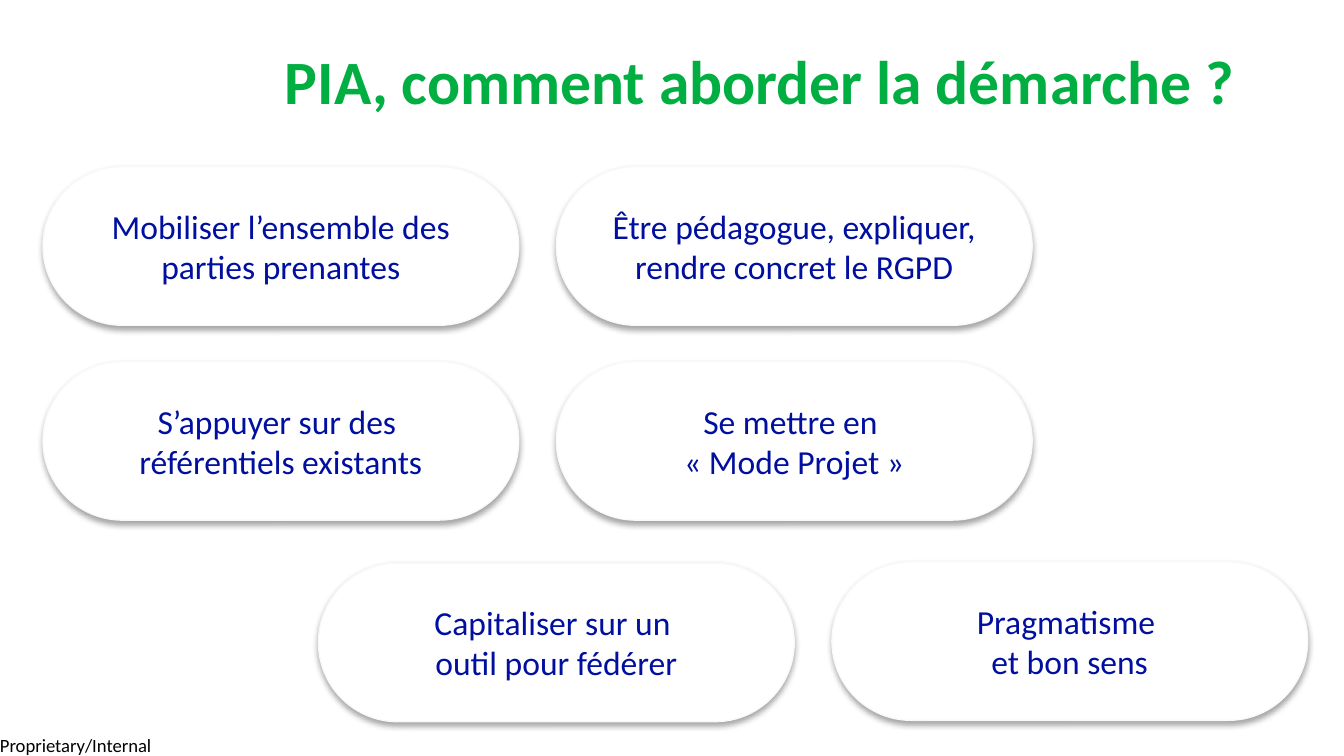
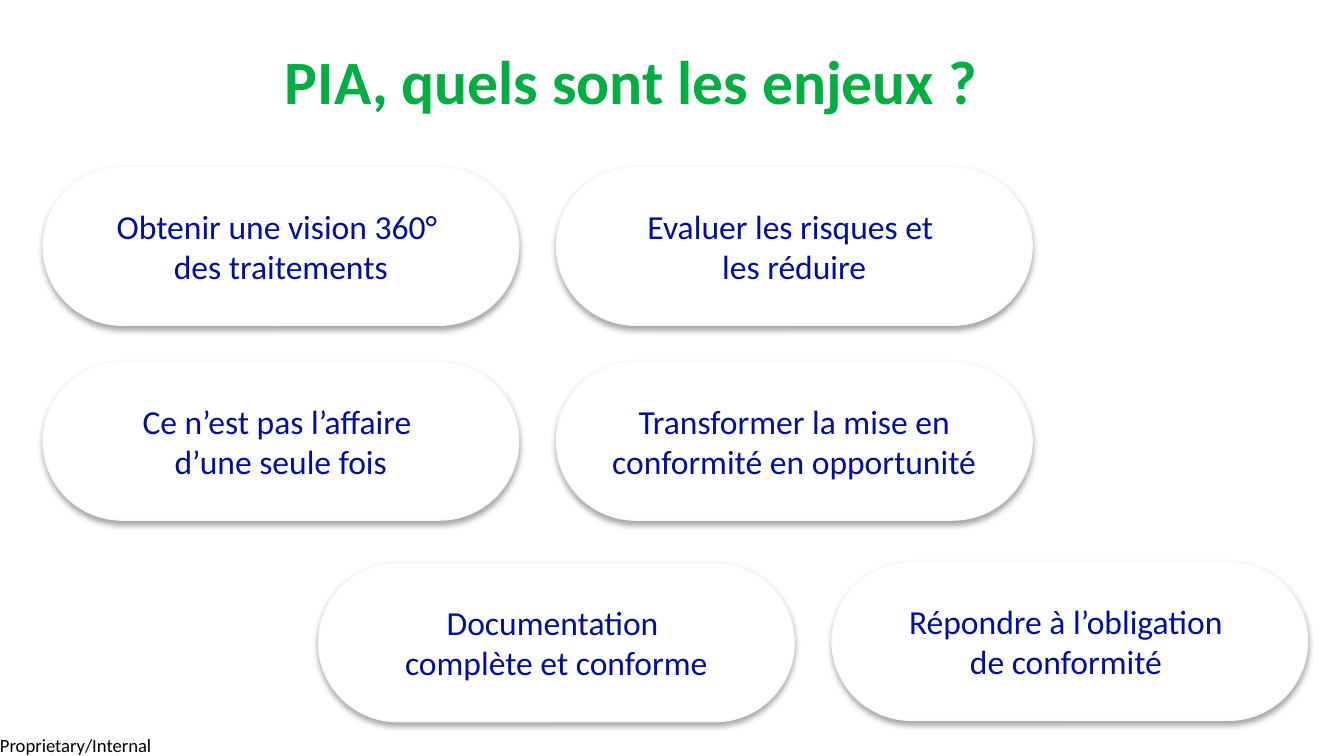
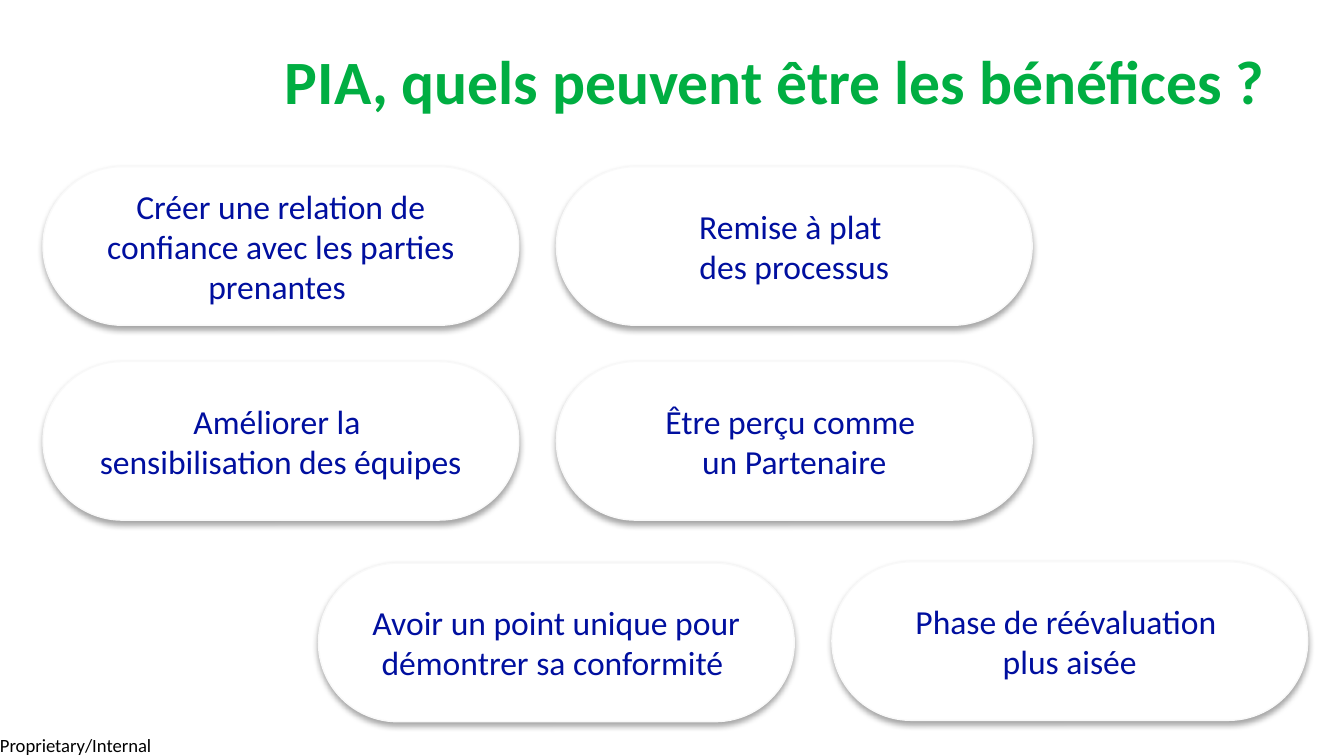
from dataclasses import dataclass

from lxml import etree
from pptx import Presentation
from pptx import util as u
from pptx.dml.color import RGBColor
from pptx.enum import shapes, text
from pptx.oxml import ns


@dataclass(frozen=True)
class Theme:
    font: str = "Calibri"
    green: str = "00AE42"
    navy: str = "000F9F"
    black: str = "000000"
    white: str = "FFFFFF"
    edge: str = "F9F9F9"
    title: int = 33
    body: int = 18
    small: int = 10


@dataclass(frozen=True)
class Row:
    left: int
    top: int
    rise: int = 0  # how much higher the right pill sits


@dataclass(frozen=True)
class Page:
    title: str
    width: int
    pills: tuple[str, ...]


THEME = Theme()
SCALE = 4572  # EMU per px, 200 px to the inch
WIDE, HIGH = 2000, 1125
PILL_W, PILL_H, STEP = 708, 236, 764
ROWS = (Row(64, 248), Row(64, 538), Row(474, 838, rise=2))
SPOTS = [(row.left + col * STEP, row.top - col * row.rise)
         for row in ROWS for col in range(2)]

# Pills run row by row; a line break starts a new paragraph.
PAGES = (
    Page("PIA, comment aborder la démarche ?", 1544, (
        "Mobiliser l’ensemble des parties prenantes",
        "Être pédagogue, expliquer, rendre concret le RGPD",
        "S’appuyer sur des \nréférentiels existants",
        "Se mettre en \n« Mode Projet »",
        "Capitaliser sur un \noutil pour fédérer",
        "Pragmatisme \net bon sens",
    )),
    Page("PIA, quels sont les enjeux ?", 1486, (
        "Obtenir une vision 360° \ndes traitements",
        "Evaluer les risques et \nles réduire",
        "Ce n’est pas l’affaire \nd’une seule fois",
        "Transformer la mise en conformité en opportunité",
        "Documentation \ncomplète et conforme",
        "Répondre à l’obligation \nde conformité ",
    )),
    Page("PIA, quels peuvent être les bénéfices ?", 1596, (
        "Créer une relation de confiance avec les parties prenantes ",
        "Remise à plat \ndes processus",
        "Améliorer la \nsensibilisation des équipes",
        "Être perçu comme \nun Partenaire",
        "Avoir un point unique pour démontrer sa conformité ",
        "Phase de réévaluation \nplus aisée",
    )),
)


def px(size: int) -> u.Emu:
    return u.Emu(size * SCALE)


def color(code: str) -> RGBColor:
    return RGBColor.from_string(code)


def write(frame, words: str, size: int, code: str, align, bold: bool = False) -> None:
    frame.text = words
    frame.word_wrap = True
    for para in frame.paragraphs:
        para.alignment = align
        for run in para.runs:
            run.font.name = THEME.font
            run.font.size = u.Pt(size)
            run.font.bold = bold
            run.font.color.rgb = color(code)


def shade(shape) -> None:
    """Give the shape a soft shadow straight below it."""
    shape.shadow.inherit = False
    effects = shape.element.spPr.find(ns.qn("a:effectLst"))
    outer = etree.SubElement(effects, ns.qn("a:outerShdw"), blurRad="40000",
                             dist="23000", dir="5400000", rotWithShape="0")
    tint = etree.SubElement(outer, ns.qn("a:srgbClr"), val=THEME.black)
    etree.SubElement(tint, ns.qn("a:alpha"), val="35000")


def add_pill(slide, left: int, top: int, words: str) -> None:
    pill = slide.shapes.add_shape(shapes.MSO_SHAPE.ROUNDED_RECTANGLE,
                                  px(left), px(top), px(PILL_W), px(PILL_H))
    pill.adjustments[0] = 0.5
    pill.fill.solid()
    pill.fill.fore_color.rgb = color(THEME.white)
    pill.line.color.rgb = color(THEME.edge)
    pill.line.width = u.Pt(0.75)
    shade(pill)
    pill.text_frame.vertical_anchor = text.MSO_ANCHOR.MIDDLE
    write(pill.text_frame, words, THEME.body, THEME.navy, text.PP_ALIGN.CENTER)


def add_footer(slide) -> None:
    box = slide.shapes.add_textbox(0, px(1092), px(234), px(34))
    frame = box.text_frame
    frame.margin_left = frame.margin_right = 0
    frame.margin_top = frame.margin_bottom = 0
    write(frame, "Proprietary/Internal", THEME.small, THEME.black, text.PP_ALIGN.LEFT)
    frame.auto_size = text.MSO_AUTO_SIZE.SHAPE_TO_FIT_TEXT


def set_title(slide, page: Page) -> None:
    title = slide.shapes.title
    title.left, title.top = px(404), px(54)
    title.width, title.height = px(page.width), px(124)
    frame = title.text_frame
    frame.auto_size = text.MSO_AUTO_SIZE.NONE
    frame.vertical_anchor = text.MSO_ANCHOR.TOP
    write(frame, page.title, THEME.title, THEME.green, text.PP_ALIGN.LEFT, bold=True)


def main() -> None:
    deck = Presentation()
    deck.slide_width, deck.slide_height = px(WIDE), px(HIGH)
    for page in PAGES:
        slide = deck.slides.add_slide(deck.slide_layouts[5])
        set_title(slide, page)
        add_footer(slide)
        for (left, top), words in zip(SPOTS, page.pills):
            add_pill(slide, left, top, words)
    deck.save("out.pptx")


if __name__ == "__main__":
    main()
